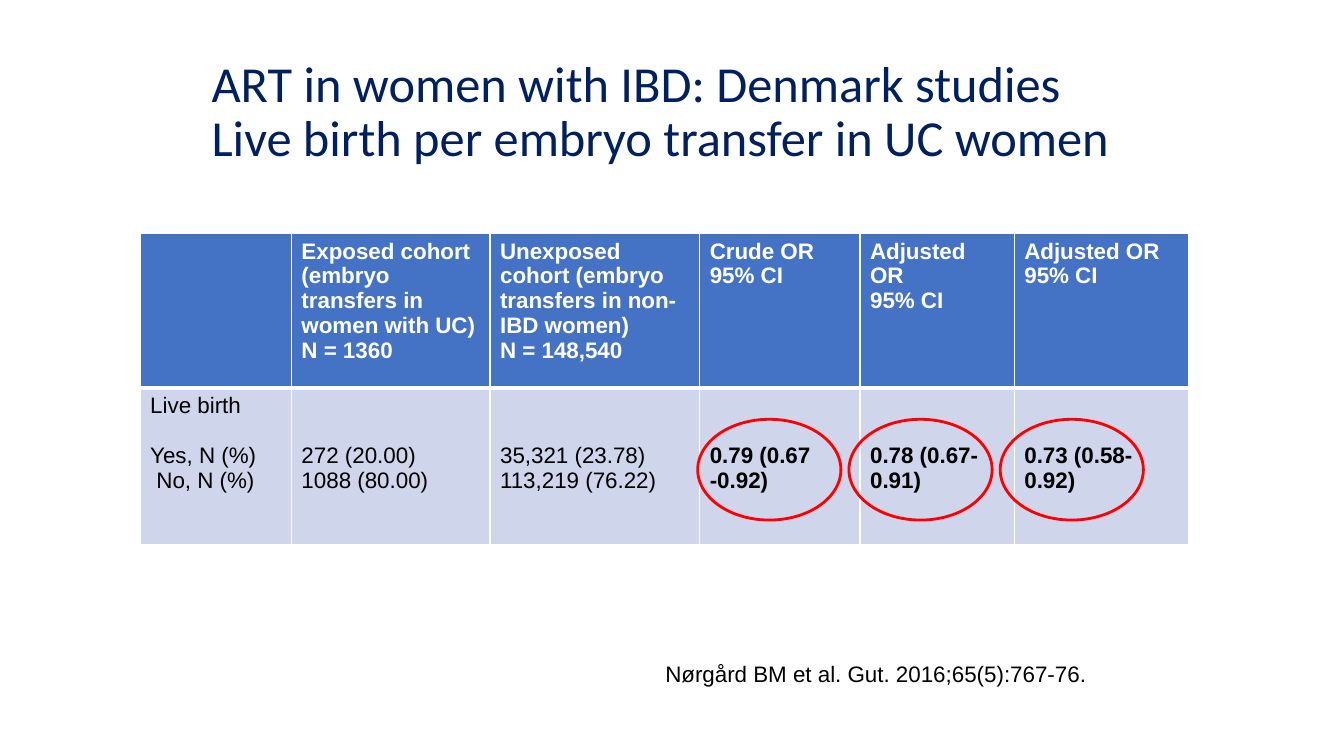
import pptx
import pptx.dml.color
import pptx.enum.shapes
import pptx.enum.text
import pptx.oxml
import pptx.oxml.ns
import pptx.util

RGB = pptx.dml.color.RGBColor
Inches, Pt = pptx.util.Inches, pptx.util.Pt
NAVY = RGB(0x00, 0x20, 0x60)
BLUE = RGB(0x44, 0x72, 0xC4)
PALE = RGB(0xCF, 0xD5, 0xEA)
WHITE = RGB(0xFF, 0xFF, 0xFF)
BLACK = RGB(0x00, 0x00, 0x00)
RED = RGB(0xFF, 0x00, 0x00)

TITLE = "ART in women with IBD: Denmark studies\vLive birth per embryo transfer in UC women"
CITATION = "Nørgård BM et al. Gut. 2016;65(5):767-76."
HEADERS = [
    [],
    ["Exposed cohort (embryo transfers in women with UC)", "N = 1360"],
    ["Unexposed cohort (embryo transfers in non-IBD women)", "N = 148,540"],
    ["Crude OR", "95% CI"],
    ["Adjusted OR", "95% CI"],
    ["Adjusted OR", "95% CI"],
]
LIVE_BIRTH = [
    ["Live birth", "Yes, N (%)", " No, N (%)"],
    ["272 (20.00)", "1088 (80.00)"],
    ["35,321 (23.78)", "113,219 (76.22)"],
    ["0.79 (0.67 -0.92)"],
    ["0.78 (0.67-0.91)"],
    ["0.73 (0.58-0.92)"],
]
COL_WIDTHS = [1.5, 1.97, 2.08, 1.59, 1.53, 1.73]
ROW_HEIGHTS = [1.53, 1.55]
TABLE_LEFT, TABLE_TOP = 1.39, 2.32
FIRST_RATIO_COL = 3
LINE_HEIGHT = 0.25
RING_LEFT, RING_TOP, RING_WIDTH, RING_HEIGHT, RING_STEP = 6.92, 4.16, 1.42, 1, 1.5


def write(tf, lines, size=16, font="Arial", color=BLACK, bold=False, spacing=None):
    tf.word_wrap = True
    for i, line in enumerate(lines):
        p = tf.paragraphs[0] if i == 0 else tf.add_paragraph()
        p.text = line
        p.line_spacing = spacing
        for r in p.runs:
            r.font.size, r.font.name = Pt(size), font
            r.font.color.rgb, r.font.bold = color, bold


def add_text(slide, box, lines, anchor=pptx.enum.text.MSO_ANCHOR.TOP, **fmt):
    tf = slide.shapes.add_textbox(*map(Inches, box)).text_frame
    tf.vertical_anchor = anchor
    write(tf, lines, **fmt)


def set_borders(cell, **widths):
    """Draw white cell borders; widths maps L, R, T and B, in schema order, to points."""
    tc_pr = cell._tc.get_or_add_tcPr()
    for side, width in widths.items():
        tc_pr.append(pptx.oxml.parse_xml(
            f'<a:ln{side} {pptx.oxml.ns.nsdecls("a")} w="{Pt(width)}">'
            f'<a:solidFill><a:srgbClr val="{WHITE}"/></a:solidFill></a:ln{side}>'))


def fill_cell(cell, lines, background, **fmt):
    cell.fill.solid()
    cell.fill.fore_color.rgb = background
    write(cell.text_frame, lines, **fmt)


def add_results_table(slide):
    table = slide.shapes.add_table(
        len(ROW_HEIGHTS), len(COL_WIDTHS), Inches(TABLE_LEFT), Inches(TABLE_TOP),
        Inches(sum(COL_WIDTHS)), Inches(sum(ROW_HEIGHTS))).table
    for row, height in zip(table.rows, ROW_HEIGHTS):
        row.height = Inches(height)
    for c, width in enumerate(COL_WIDTHS):
        table.columns[c].width = Inches(width)
        head, body = table.cell(0, c), table.cell(1, c)
        set_borders(head, L=1, R=1, T=1, B=3)
        set_borders(body, L=1, R=1, T=3, B=1)
        fill_cell(head, HEADERS[c], BLUE, color=WHITE, bold=True)
        fill_cell(body, LIVE_BIRTH[c], PALE, bold=c >= FIRST_RATIO_COL)
        if c:
            body.margin_top = Inches(0.05 + 2 * LINE_HEIGHT)
    table.cell(1, 0).text_frame.paragraphs[1].space_before = Pt(LINE_HEIGHT * 72)


def add_ring(slide, left):
    sp = slide.shapes.add_shape(
        pptx.enum.shapes.MSO_SHAPE.OVAL, Inches(left), Inches(RING_TOP),
        Inches(RING_WIDTH), Inches(RING_HEIGHT))
    sp.shadow.inherit = False
    sp.fill.background()
    sp.line.color.rgb = RED
    sp.line.width = Pt(2)


def main():
    prs = pptx.Presentation()
    prs.slide_width, prs.slide_height = Inches(13.33), Inches(7.5)
    slide = prs.slides.add_slide(prs.slide_layouts[6])
    add_text(slide, (2, 0.5, 9.17, 1.25), [TITLE], size=36, font="Calibri", color=NAVY,
             spacing=0.9, anchor=pptx.enum.text.MSO_ANCHOR.MIDDLE)
    add_results_table(slide)
    for i in range(len(COL_WIDTHS) - FIRST_RATIO_COL):
        add_ring(slide, RING_LEFT + i * RING_STEP)
    add_text(slide, (6.5, 6.5, 4.75, 0.64), [CITATION])
    prs.save("out.pptx")


if __name__ == "__main__":
    main()
